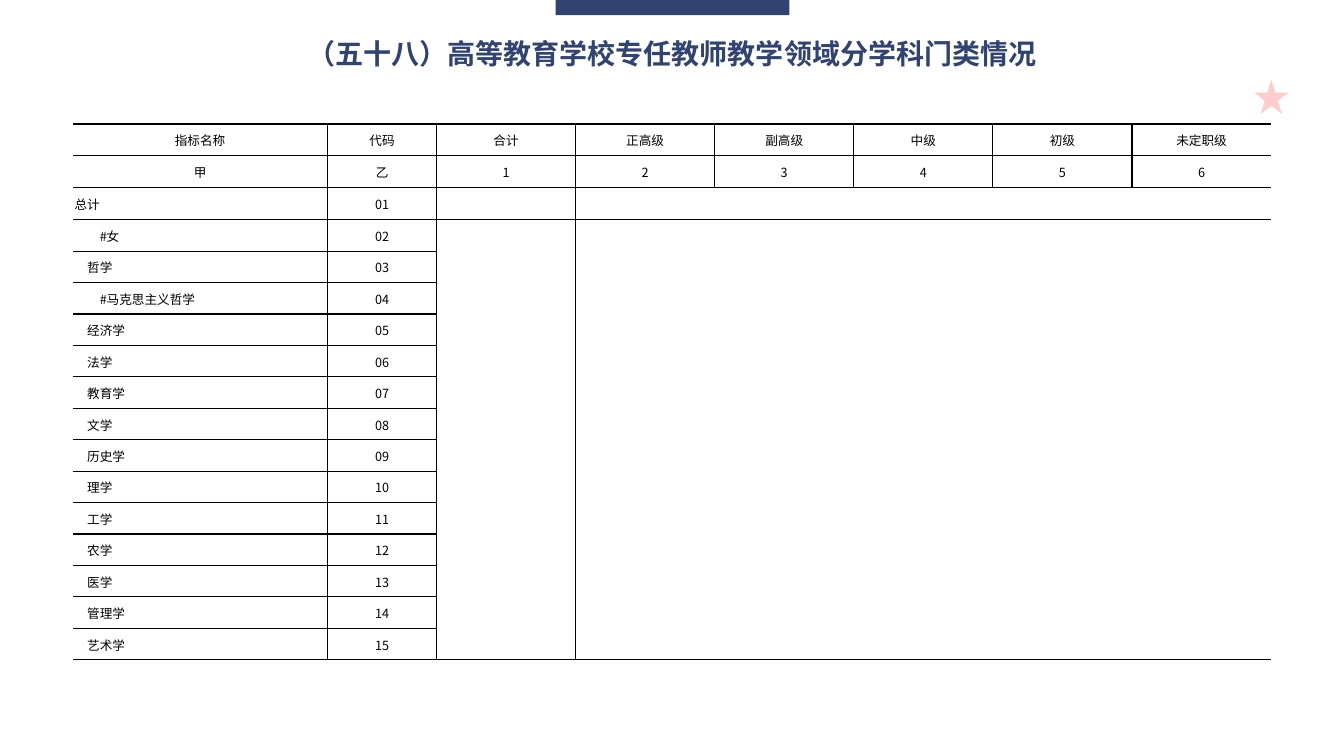
import pptx
import pptx.util
import pptx.dml.color
import pptx.enum.shapes
import pptx.enum.text
import pptx.oxml
import pptx.oxml.ns

Pt = pptx.util.Pt
RGBColor = pptx.dml.color.RGBColor
Align = pptx.enum.text.PP_ALIGN
Middle = pptx.enum.text.MSO_ANCHOR.MIDDLE
Shape = pptx.enum.shapes.MSO_SHAPE
qn = pptx.oxml.ns.qn

WIDE = pptx.util.Inches(13.33)
HIGH = pptx.util.Inches(7.5)
NAVY = RGBColor(0x30, 0x43, 0x71)
RED = RGBColor(0xFF, 0x00, 0x00)
BLACK = RGBColor(0x00, 0x00, 0x00)
SANS = "Noto Sans CJK SC"
SERIF = "Times New Roman"
PLAIN = "{2D5ABB26-0587-4C30-8999-92F81FD0307C}"

HEADS = ["指标名称", "代码", "合计", "正高级", "副高级", "中级", "初级", "未定职级"]
MARKS = ["甲", "乙", "1", "2", "3", "4", "5", "6"]
FIELDS = ["总计", "#女", "哲学", "#马克思主义哲学", "经济学", "法学", "教育学", "文学",
          "历史学", "理学", "工学", "农学", "医学", "管理学", "艺术学"]
COLS = [18.98, 8.1] + [10.35] * 6
ROWS = [4.13, 4.27, 4.27] + [4.16] * 14


def across(share):
    return round(WIDE * share / 100)


def down(share):
    return round(HIGH * share / 100)


def box(x, y, w, h):
    return across(x), down(y), across(w), down(h)


def add_mark(slide, kind, area, color, alpha=100):
    shape = slide.shapes.add_shape(kind, *area)
    shape.shadow.inherit = False
    shape.fill.solid()
    shape.fill.fore_color.rgb = color
    shape.line.fill.background()
    if alpha < 100:
        tint = shape.element.spPr.find(".//" + qn("a:srgbClr"))
        tint.makeelement(qn("a:alpha"))
        pptx.oxml.ns.qn
        node = tint.makeelement(qn("a:alpha"), {"val": str(alpha * 1000)})
        tint.append(node)


def set_font(run, face, size, color, bold=False):
    run.font.name = face
    run.font.size = Pt(size)
    run.font.bold = bold
    run.font.color.rgb = color
    east = run.font._element.makeelement(qn("a:ea"), {"typeface": SANS})
    run.font._element.append(east)


def set_title(slide, text, area):
    title = slide.shapes.title
    title.left, title.top, title.width, title.height = area
    frame = title.text_frame
    frame.text = text
    frame.word_wrap = False
    frame.vertical_anchor = Middle
    line = frame.paragraphs[0]
    line.alignment = Align.CENTER
    set_font(line.runs[0], "Arial", 20, NAVY, True)


def draw_edges(cell, sides):
    props = cell._tc.get_or_add_tcPr()
    for side in "LRTB":
        if side in sides:
            props.append(pptx.oxml.parse_xml(
                f'<a:ln{side} {pptx.oxml.ns.nsdecls("a")} w="12700">'
                f'<a:solidFill><a:srgbClr val="{BLACK}"/></a:solidFill></a:ln{side}>'))
    cell.fill.background()


def pick_edges(row, col):
    if row < 2 or col < 2:
        skip = {0: "L", len(COLS) - 1: "R"}.get(col, "")
        return "LRTB".replace(skip, "")
    rules = [("L", col == 2), ("T", row == 2), ("B", row == len(ROWS) - 1)]
    return "".join(side for side, shown in rules if shown)


def fill_cell(cell, text, row, col):
    cell.margin_left = cell.margin_right = pptx.util.Inches(0.02)
    cell.margin_top = cell.margin_bottom = 0
    cell.vertical_anchor = Middle
    line = cell.text_frame.paragraphs[0]
    line.line_spacing = Pt(14)
    if not text:
        end = line._p.makeelement(qn("a:endParaRPr"), {"sz": "900"})
        line._p.append(end)
        return
    field = row > 1 and col == 0
    line.alignment = Align.JUSTIFY if field else Align.CENTER
    if field and row > 2:
        line._p.get_or_add_pPr().set("indent", str(Pt(18 if text[0] == "#" else 9)))
    parts = ["#", text[1:]] if text[0] == "#" else [text]
    for part in parts:
        run = line.add_run()
        run.text = part
        set_font(run, SANS if part.isascii() else SERIF, 9, BLACK)


def add_grid(slide, data, area):
    frame = slide.shapes.add_table(len(ROWS), len(COLS), *area)
    frame.element.find(".//" + qn("a:tableStyleId")).text = PLAIN
    table = frame.table
    table.first_row = table.horz_banding = False
    for col, share in enumerate(COLS):
        table.columns[col].width = across(share)
    for row, share in enumerate(ROWS):
        table.rows[row].height = down(share)
        for col, text in enumerate(data[row]):
            cell = table.cell(row, col)
            fill_cell(cell, text, row, col)
            draw_edges(cell, pick_edges(row, col))


def main():
    deck = pptx.Presentation()
    deck.slide_width, deck.slide_height = WIDE, HIGH
    slide = deck.slides.add_slide(deck.slide_layouts[5])
    add_mark(slide, Shape.STAR_5_POINT, box(93.32, 10.53, 2.55, 4.53), RED, 20)
    add_mark(slide, Shape.RECTANGLE, box(41.34, -0.13, 17.4, 2.13), NAVY)
    set_title(slide, "（五十八）高等教育学校专任教师教学领域分学科门类情况",
              box(21.9, 4.13, 56.2, 5.87))
    data = [HEADS, MARKS]
    for code, field in enumerate(FIELDS, 1):
        data.append([field, f"{code:02d}"] + [""] * 6)
    add_grid(slide, data, box(5.4, 16.4, sum(COLS), sum(ROWS)))
    deck.save("out.pptx")


if __name__ == "__main__":
    main()
